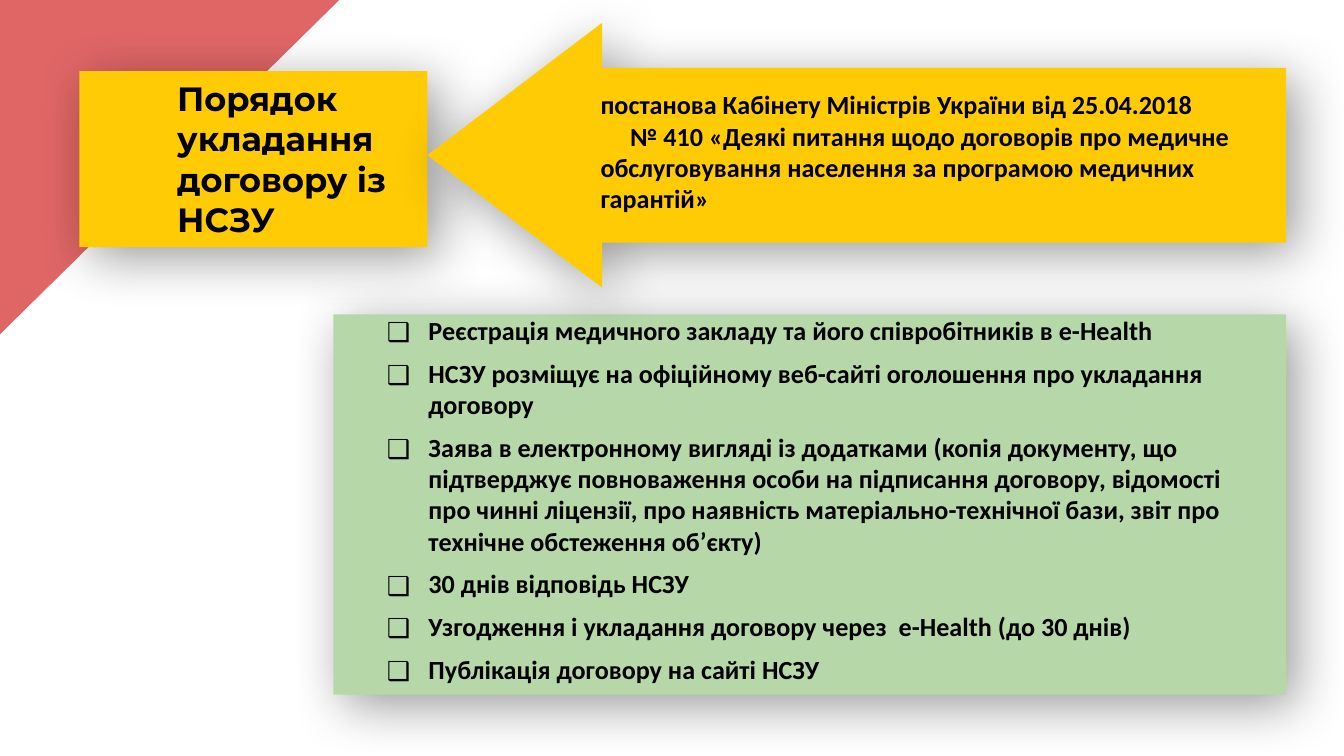
from lxml.etree import SubElement as Sub
from pptx import Presentation
from pptx.dml.color import RGBColor
from pptx.enum.shapes import MSO_SHAPE as Kind
from pptx.enum.text import MSO_AUTO_SIZE as Fit
from pptx.oxml.ns import qn
from pptx.util import Inches, Pt

GREEN = RGBColor(0xB6, 0xD7, 0xA8)
RED = RGBColor(0xE0, 0x66, 0x66)
GOLD = RGBColor(0xFF, 0xCB, 0x05)
BLACK = RGBColor(0, 0, 0)

TITLE = "Порядок укладання договору із НСЗУ"
LAW = [
    "постанова Кабінету Міністрів України від 25.04.2018",
    "№ 410 «Деякі питання щодо договорів про медичне обслуговування "
    "населення за програмою медичних гарантій»",
]
STEPS = [
    "Реєстрація медичного закладу та його співробітників в e-Health",
    "НСЗУ розміщує на офіційному веб-сайті оголошення про укладання договору",
    "Заява в електронному вигляді із додатками (копія документу, що "
    "підтверджує повноваження особи на підписання договору, відомості "
    "про чинні ліцензії, про наявність матеріально-технічної бази, "
    "звіт про технічне обстеження об’єкту)",
    "30 днів відповідь НСЗУ",
    "Узгодження і укладання договору через  e-Health (до 30 днів)",
    "Публікація договору на сайті НСЗУ",
]


def add_shape(slide, kind, box, color):
    shape = slide.shapes.add_shape(kind, *map(Inches, box))
    shape.shadow.inherit = False
    shape.fill.solid()
    shape.fill.fore_color.rgb = color
    shape.line.fill.background()
    return shape


def cast_shadow(shape):
    effects = shape._element.spPr.find(qn("a:effectLst"))
    outer = Sub(effects, qn("a:outerShdw"), blurRad=str(Pt(29)),
                dist=str(Pt(8)), dir=str(45 * 60000), algn="tl",
                rotWithShape="0")
    color = Sub(outer, qn("a:srgbClr"), val=str(BLACK))
    Sub(color, qn("a:alpha"), val="40000")


def add_text(slide, box, lines, size=14, face="Calibri"):
    frame = slide.shapes.add_textbox(*map(Inches, box)).text_frame
    frame.word_wrap = True
    frame.auto_size = Fit.SHAPE_TO_FIT_TEXT
    frame.text = "\n".join(lines)
    for para in frame.paragraphs:
        font = para.font
        font.name, font.size, font.bold = face, Pt(size), True
        font.color.rgb = BLACK
    return frame.paragraphs


def add_corner(slide, box):
    add_shape(slide, Kind.RIGHT_TRIANGLE, box, RED).rotation = 90


def add_title(slide, box):
    left, top, width, height = box
    cast_shadow(add_shape(slide, Kind.RECTANGLE, box, GOLD))
    add_text(slide, (left + 0.63, top, width - 0.15, height), [TITLE],
             18, "Montserrat")


def add_law(slide, box):
    left, top, width, height = box
    arrow = add_shape(slide, Kind.LEFT_ARROW, box, GOLD)
    arrow.adjustments[0] = 0.66
    arrow.adjustments[1] = 0.66
    cast_shadow(arrow)
    paras = add_text(slide, (left + 1.19, top + 0.44, 5, 1.04), LAW)
    paras[1]._p.get_or_add_pPr().set("indent", str(Inches(0.22)))


def add_steps(slide, box):
    left, top, width, height = box
    cast_shadow(add_shape(slide, Kind.RECTANGLE, box, GREEN))
    area = left + 0.3, top - 0.05, width - 0.5, height + 0.05
    for para in add_text(slide, area, STEPS):
        para.space_after = Pt(6)
        props = para._p.get_or_add_pPr()
        props.set("marL", str(Inches(0.31)))
        props.set("indent", str(Inches(-0.31)))
        face = props.makeelement(qn("a:buFont"),
                                 {"typeface": "Noto Sans Symbols"})
        mark = props.makeelement(qn("a:buChar"), {"char": "❑"})
        props.find(qn("a:spcAft")).addnext(face)
        face.addnext(mark)


def main():
    deck = Presentation()
    deck.slide_width = Inches(10)
    deck.slide_height = deck.slide_width * 9 // 16
    slide = deck.slides.add_slide(deck.slide_layouts[6])
    add_steps(slide, (2.48, 2.34, 7.09, 2.83))
    add_corner(slide, (-0.49, -0.4, 3.37, 3.42))
    add_title(slide, (0.59, 0.53, 2.59, 1.31))
    add_law(slide, (3.18, 0.17, 6.39, 1.97))
    deck.save("out.pptx")


if __name__ == "__main__":
    main()
